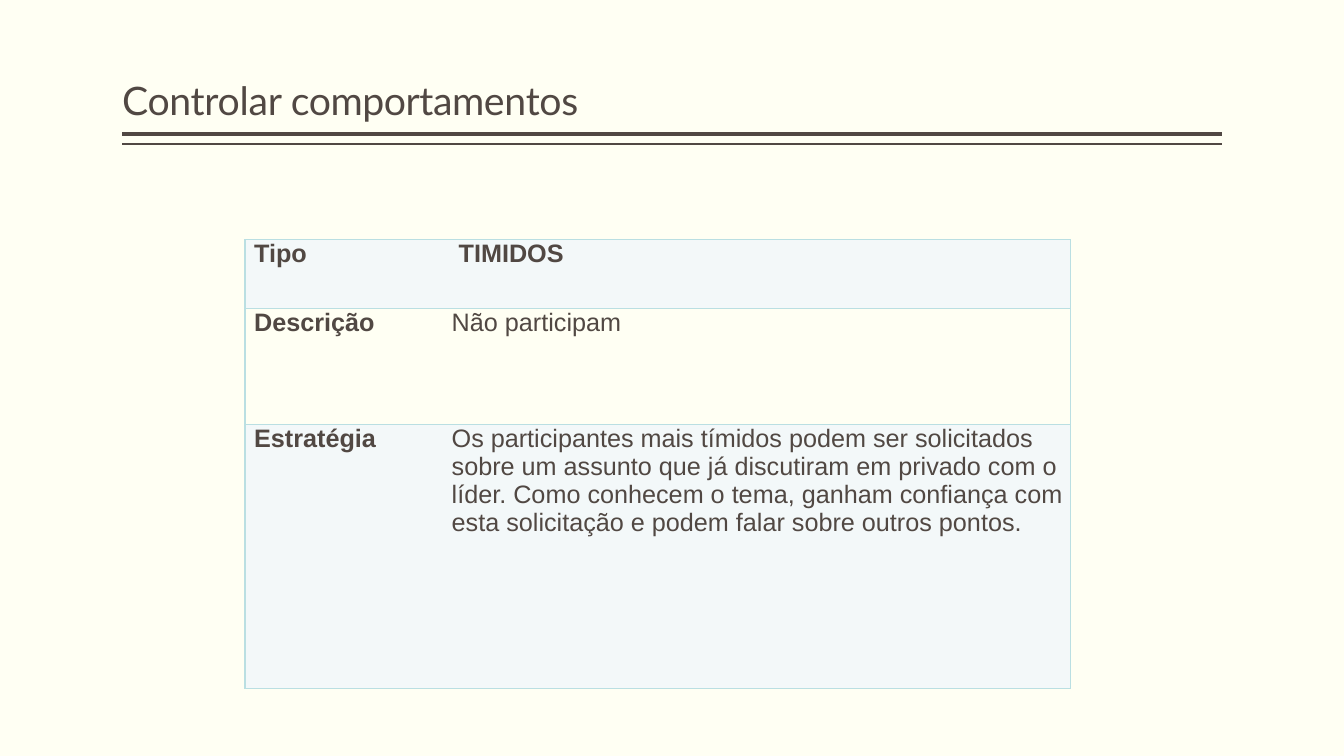
from dataclasses import dataclass

from lxml.etree import SubElement
from pptx import Presentation
from pptx.dml.color import RGBColor as Rgb
from pptx.enum.shapes import MSO_CONNECTOR as Connector
from pptx.enum.text import MSO_ANCHOR as Anchor, MSO_AUTO_SIZE as AutoSize, PP_ALIGN as Align
from pptx.oxml.ns import qn
from pptx.util import Emu, Inches, Pt

COLOURS = {"page": "FFFFF3", "ink": "514843", "band": "F3F8F9", "border": "BADFE2"}
PAGE_WIDTH, PAGE_HEIGHT = Inches(13.33), Inches(7.5)
MARGIN, CONTENT_WIDTH = 9.08, 81.84  # percent of the page width
COLUMN_SHARES = (12.6, 48.83)


@dataclass(frozen=True)
class Rule:
    top: float
    weight: float


@dataclass(frozen=True)
class TableRow:
    label: str
    text: str
    height: float
    indent: float = 2.78
    bold: bool = False
    banded: bool = True


RULES = (Rule(17.73, 3), Rule(19.07, 1))
TITLE_RUNS = (("Controlar ", -20), ("comportame", -30), ("ntos", -20))
ROWS = (
    TableRow("Tipo", "TIMIDOS", 9.07, indent=3.3, bold=True),
    TableRow("Descrição", "Não participam", 15.33, banded=False),
    TableRow(
        "Estratégia",
        "Os participantes mais tímidos podem ser solicitados sobre um assunto que já "
        "discutiram em privado com o líder. Como conhecem o tema, ganham confiança com "
        "esta solicitação e podem falar sobre outros pontos.",
        34.93,
    ),
)


def across(percent: float) -> Emu:
    return Emu(round(PAGE_WIDTH * percent / 100))


def down(percent: float) -> Emu:
    return Emu(round(PAGE_HEIGHT * percent / 100))


def colour(name: str) -> Rgb:
    return Rgb.from_string(COLOURS[name])


def add_run(para, text: str, font_name: str, size: float, bold: bool = False):
    run = para.add_run()
    run.text = text
    run.font.name, run.font.size, run.font.bold = font_name, Pt(size), bold
    run.font.color.rgb = colour("ink")
    return run


def draw_rule(page, rule: Rule) -> None:
    line = page.shapes.add_connector(
        Connector.STRAIGHT, across(MARGIN + CONTENT_WIDTH), down(rule.top),
        across(MARGIN), down(rule.top))
    line.line.color.rgb = colour("ink")
    line.line.width = Pt(rule.weight)
    SubElement(line._element.spPr, qn("a:effectLst"))


def write_title(page) -> None:
    title = page.shapes.title
    title.left, title.top = across(MARGIN), down(1.07)
    title.width, title.height = across(CONTENT_WIDTH), down(16)
    frame = title.text_frame
    frame.auto_size, frame.word_wrap = AutoSize.NONE, True
    frame.vertical_anchor = Anchor.BOTTOM
    frame.margin_left = frame.margin_right = 0
    frame.margin_top = frame.margin_bottom = Inches(0.05)
    para = frame.paragraphs[0]
    para.alignment, para.line_spacing = Align.LEFT, 0.9
    for text, spacing in TITLE_RUNS:
        run = add_run(para, text, "Lato", 28)
        run.font._element.set("spc", str(spacing))


def set_borders(cell, visible: str) -> None:
    """Draw the named sides (L, R, T, B) and clear the others."""
    properties = cell._tc.get_or_add_tcPr()
    for side in "LRTB":
        line = SubElement(properties, qn(f"a:ln{side}"), w=str(Pt(1)))
        if side in visible:
            fill = SubElement(line, qn("a:solidFill"))
            SubElement(fill, qn("a:srgbClr"), val=COLOURS["border"])
        else:
            SubElement(line, qn("a:noFill"))


def fill_cell(cell, text: str, indent: float, bold: bool, banded: bool, borders: str) -> None:
    cell.margin_left = cell.margin_right = cell.margin_top = cell.margin_bottom = 0
    set_borders(cell, borders)
    if banded:
        cell.fill.solid()
        cell.fill.fore_color.rgb = colour("band")
    else:
        cell.fill.background()
    para = cell.text_frame.paragraphs[0]
    para._p.get_or_add_pPr().set("marL", str(across(indent)))
    add_run(para, text, "Arial", 18, bold)


def draw_table(page) -> None:
    table = page.shapes.add_table(
        len(ROWS), len(COLUMN_SHARES), across(18.23), down(31.73),
        across(sum(COLUMN_SHARES)), down(sum(row.height for row in ROWS))).table
    table.first_row = table.horz_banding = False
    for column, share in zip(table.columns, COLUMN_SHARES):
        column.width = across(share)
    for index, row in enumerate(ROWS):
        table.rows[index].height = down(row.height)
        fill_cell(table.cell(index, 0), row.label, 0.68, True, row.banded, "LTB")
        fill_cell(table.cell(index, 1), row.text, row.indent, row.bold, row.banded, "RTB")


def main() -> None:
    deck = Presentation()
    deck.slide_width, deck.slide_height = PAGE_WIDTH, PAGE_HEIGHT
    page = deck.slides.add_slide(deck.slide_layouts[5])
    page.background.fill.solid()
    page.background.fill.fore_color.rgb = colour("page")

    # Heading and its double rule
    for rule in RULES:
        draw_rule(page, rule)
    write_title(page)

    # Behaviour table
    draw_table(page)
    deck.save("out.pptx")


if __name__ == "__main__":
    main()
